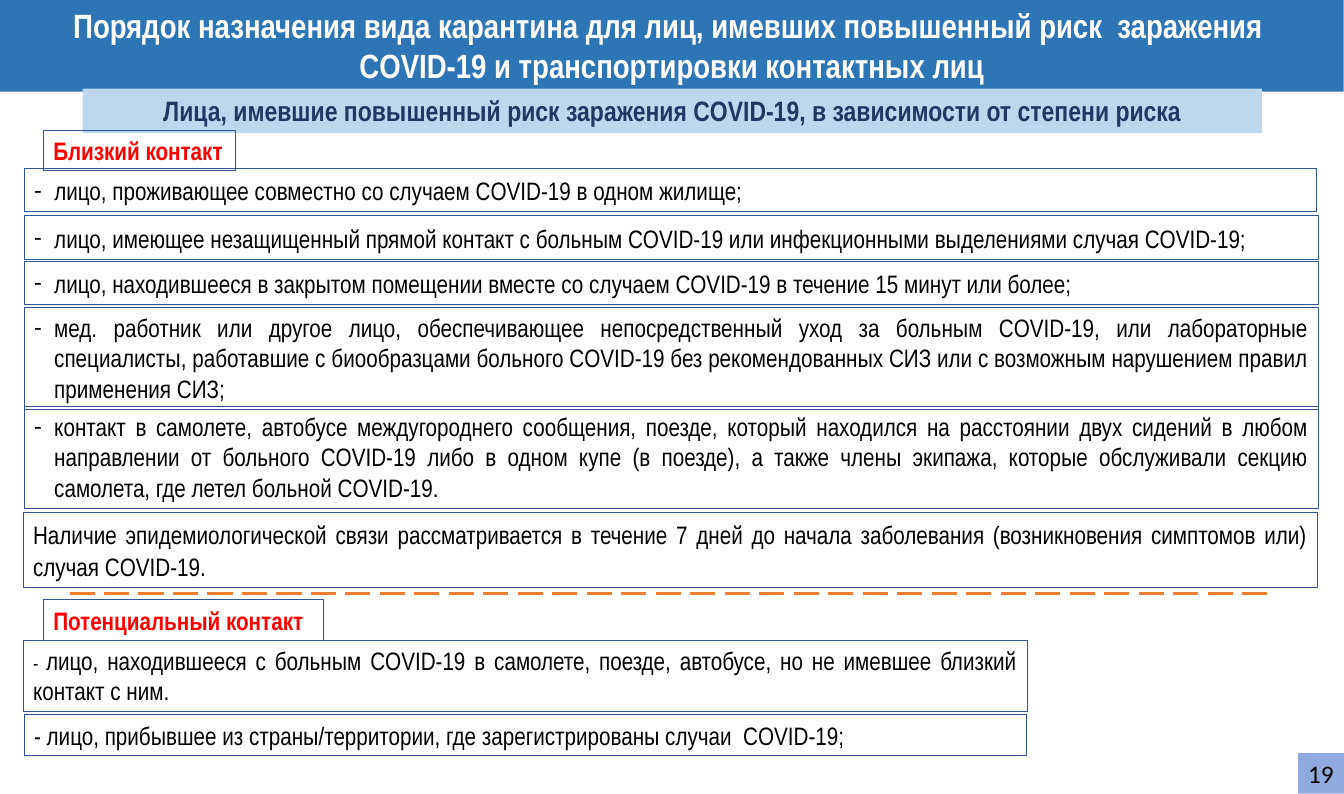
from dataclasses import dataclass

import pptx
import pptx.dml.color
import pptx.enum.dml
import pptx.enum.shapes
import pptx.enum.text
import pptx.shapes.autoshape
import pptx.slide
import pptx.util
from lxml import etree
from pptx.oxml.ns import qn

Inches = pptx.util.Inches
Pt = pptx.util.Pt
Align = pptx.enum.text.PP_ALIGN

SLIDE_WIDTH = Inches(40 / 3)
SLIDE_HEIGHT = Inches(20 / 2.54)
NAVY = "2F5597"
BLACK = "000000"
RED = "FF0000"
INDENT = 0.2


@dataclass(frozen=True)
class Style:
    size: float = 18
    color: str = BLACK
    bold: bool = False
    font: str = "Arial Narrow"
    align: Align = Align.JUSTIFY
    fill: str | None = None
    border: str | None = NAVY
    right_inset: float = 0.1
    spacing: float = 1.0
    bullet: str = ""


@dataclass(frozen=True)
class Box:
    left: float
    top: float
    width: float
    height: float
    paragraphs: tuple[str, ...]
    style: Style
    lead: str = ""
    lead_size: float = 14


TITLE = Style(24, "FFFFFF", True, align=Align.CENTER, fill="2E75B6", border=None)
SUBTITLE = Style(20, "203864", True, align=Align.CENTER, fill="BDD7EE", border=None)
HEADING = Style(color=RED, bold=True, align=Align.LEFT, right_inset=0)
BODY = Style()
LOOSE = Style(spacing=1.07)
BULLET = Style(bullet="-")
LOOSE_BULLET = Style(spacing=1.07, bullet="-")
NUMBER = Style(font="Calibri", align=Align.LEFT, fill="8FAADC", border=None, right_inset=0)

BOXES = [
    Box(0, 0, 13.33, 0.91, (
        "Порядок назначения вида карантина для лиц, имевших повышенный риск  заражения ",
        "COVID-19 и транспортировки контактных лиц",
    ), TITLE),
    Box(0.82, 0.88, 11.7, 0.44, (
        "Лица, имевшие повышенный риск заражения COVID-19, в зависимости от степени риска",
    ), SUBTITLE),
    Box(0.43, 1.29, 1.91, 0.4, ("Близкий контакт",), HEADING),
    Box(0.43, 5.95, 2.78, 0.4, ("Потенциальный контакт",), HEADING),
    Box(0.23, 5.08, 12.84, 0.75, (
        "Наличие эпидемиологической связи рассматривается в течение 7 дней до начала "
        "заболевания (возникновения симптомов или) случая COVID-19.",
    ), LOOSE),
    Box(0.23, 6.35, 9.96, 0.71, (
        "лицо, находившееся с больным COVID-19 в самолете, поезде, автобусе, "
        "но не имевшее близкий контакт с ним.",
    ), BODY, lead="- "),
    Box(0.24, 1.67, 12.82, 0.43, (
        "лицо, проживающее совместно со случаем COVID-19 в одном жилище;",
    ), LOOSE_BULLET),
    Box(0.24, 2.14, 12.84, 0.43, (
        "лицо, имеющее незащищенный прямой контакт с больным COVID-19 или "
        "инфекционными выделениями случая COVID-19;",
    ), LOOSE_BULLET),
    Box(0.24, 2.59, 12.84, 0.43, (
        "лицо, находившееся в закрытом помещении вместе со случаем COVID-19 "
        "в течение 15 минут или более;",
    ), LOOSE_BULLET),
    Box(0.24, 3.05, 12.84, 1.01, (
        "мед. работник или другое лицо, обеспечивающее непосредственный уход за больным "
        "COVID-19, или лабораторные специалисты, работавшие с биообразцами больного "
        "COVID-19 без рекомендованных СИЗ или с возможным нарушением правил применения СИЗ;",
    ), BULLET),
    Box(0.24, 4.03, 12.84, 1.01, (
        "контакт в самолете, автобусе междугороднего сообщения, поезде, который находился "
        "на расстоянии двух сидений в любом направлении от больного COVID-19 либо в одном "
        "купе (в поезде), а также члены экипажа, которые обслуживали секцию самолета, "
        "где летел больной COVID-19.",
    ), BULLET),
    Box(0.24, 7.09, 9.94, 0.4, (
        "- лицо, прибывшее из страны/территории, где зарегистрированы случаи  COVID-19;",
    ), BODY),
    Box(12.88, 7.47, 0.46, 0.4, ("19",), NUMBER),
]


def rgb(color: str) -> pptx.dml.color.RGBColor:
    return pptx.dml.color.RGBColor.from_string(color)


def apply(target: object, values: dict[str, object]) -> None:
    for name, value in values.items():
        setattr(target, name, value)


def paint(shape: pptx.shapes.autoshape.Shape, style: Style) -> None:
    shape.shadow.inherit = False
    if style.fill:
        shape.fill.solid()
        shape.fill.fore_color.rgb = rgb(style.fill)
    else:
        shape.fill.background()
    if style.border:
        shape.line.color.rgb = rgb(style.border)
        shape.line.width = Pt(0.75)
    else:
        shape.line.fill.background()


def add_run(paragraph: object, text: str, size: float, style: Style) -> None:
    run = paragraph.add_run()
    run.text = text
    apply(run.font, {"size": Pt(size), "name": style.font, "bold": style.bold})
    run.font.color.rgb = rgb(style.color)


def add_bullet(paragraph: object, character: str) -> None:
    properties = paragraph._p.get_or_add_pPr()
    properties.set("marL", str(Inches(INDENT)))
    properties.set("indent", str(-Inches(INDENT)))
    etree.SubElement(properties, qn("a:buFont")).set("typeface", "Calibri")
    etree.SubElement(properties, qn("a:buChar")).set("char", character)


def add_box(slide: pptx.slide.Slide, box: Box) -> None:
    style = box.style
    shape = slide.shapes.add_shape(
        pptx.enum.shapes.MSO_SHAPE.RECTANGLE,
        *map(Inches, (box.left, box.top, box.width, box.height)),
    )
    paint(shape, style)
    frame = shape.text_frame
    apply(frame, {
        "word_wrap": True,
        "vertical_anchor": pptx.enum.text.MSO_ANCHOR.TOP,
        "margin_right": Inches(style.right_inset),
    })
    for index, text in enumerate(box.paragraphs):
        paragraph = frame.add_paragraph() if index else frame.paragraphs[0]
        apply(paragraph, {"alignment": style.align, "line_spacing": style.spacing})
        if style.bullet:
            add_bullet(paragraph, style.bullet)
        if box.lead:
            add_run(paragraph, box.lead, box.lead_size, style)
        add_run(paragraph, text, style.size, style)


def add_divider(slide: pptx.slide.Slide, left: float, right: float, top: float) -> None:
    divider = slide.shapes.add_connector(
        pptx.enum.shapes.MSO_CONNECTOR.STRAIGHT, *map(Inches, (left, top, right, top))
    )
    apply(divider.line, {
        "width": Pt(2.25),
        "dash_style": pptx.enum.dml.MSO_LINE.LONG_DASH,
    })
    divider.line.color.rgb = rgb("ED7D31")
    etree.SubElement(divider._element.spPr, qn("a:effectLst"))


def main() -> None:
    presentation = pptx.Presentation()
    apply(presentation, {"slide_width": SLIDE_WIDTH, "slide_height": SLIDE_HEIGHT})
    slide = presentation.slides.add_slide(presentation.slide_layouts[6])
    for box in BOXES:
        add_box(slide, box)
    add_divider(slide, 0.69, 12.6, 5.89)
    presentation.save("out.pptx")


if __name__ == "__main__":
    main()
